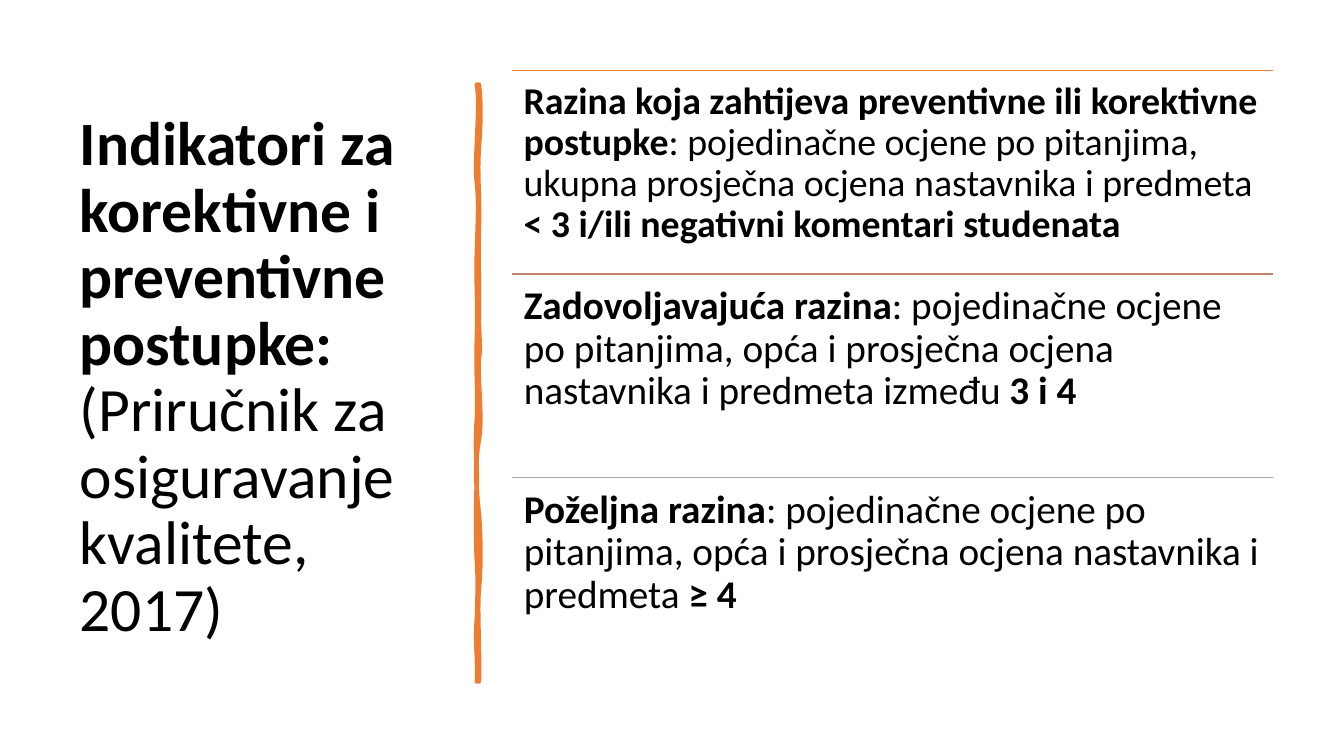
import lxml.etree
import pptx
import pptx.dml.color
import pptx.enum.shapes
import pptx.enum.text
import pptx.oxml.ns
import pptx.util

PX = 9144  # EMU per px, 100 px to the inch
SLIDE = (1333, 750)
COLORS = {"text": "000000", "orange": "ED7D31", "copper": "C48170", "grey": "A5A5A5"}

# Each run is (text, bold); each title entry is one line before wrapping.
TITLE = [
    ("Indikatori za korektivne i preventivne postupke:", True),
    ("(Priručnik za osiguravanje kvalitete, 2017)", False),
]
TITLE_BOX = (69, 70, 374, 611)

# (rule colour, text size, runs)
LEVELS = [
    ("orange", 27, [
        ("Razina koja zahtijeva preventivne ili korektivne postupke", True),
        (": pojedinačne ocjene po pitanjima, ukupna prosječna ocjena nastavnika i predmeta ", False),
        ("< 3 i/ili negativni komentari studenata", True),
    ]),
    ("copper", 28, [
        ("Zadovoljavajuća razina", True),
        (": pojedinačne ocjene po pitanjima, opća i prosječna ocjena nastavnika i predmeta između ", False),
        ("3 i 4", True),
    ]),
    ("grey", 28, [
        ("Poželjna razina", True),
        (": pojedinačne ocjene po pitanjima, opća i prosječna ocjena nastavnika i predmeta ", False),
        ("≥ 4", True),
    ]),
]
LEVEL_LEFT, LEVEL_TOP, LEVEL_W, LEVEL_H = 508, 70, 755, 202
INSET_RATIO = 0.3  # text inset as a share of the text size

# Brush stroke: a start point, then two control points and an end point per curve.
BRUSH_CENTRE = (474, 380)
BRUSH_START = (475, 84)
BRUSH_CURVES = [
    ((477, 102), (477, 119), (475, 146)),
    ((473, 173), (476, 195), (475, 226)),
    ((474, 257), (475, 262), (475, 294)),
    ((474, 325), (477, 342), (475, 356)),
    ((473, 370), (479, 414), (475, 436)),
    ((471, 457), (472, 484), (475, 510)),
    ((477, 536), (477, 564), (475, 584)),
    ((473, 603), (476, 650), (475, 676)),
    ((474, 676), (473, 676), (473, 676)),
    ((474, 646), (471, 644), (473, 613)),
    ((474, 583), (474, 570), (473, 557)),
    ((472, 544), (472, 495), (473, 477)),
    ((473, 459), (471, 445), (473, 415)),
    ((474, 386), (472, 373), (473, 335)),
    ((474, 298), (472, 281), (473, 250)),
    ((474, 218), (475, 200), (473, 181)),
    ((470, 163), (477, 104), (473, 84)),
]


def emu(*lengths):
    return [pptx.util.Emu(n * PX) for n in lengths]


def rgb(name):
    return pptx.dml.color.RGBColor.from_string(COLORS[name])


def set_all(obj, values):
    for name, value in values.items():
        setattr(obj, name, value)


def format_frame(tf, anchor, inset_x, inset_y):
    set_all(tf, {
        "word_wrap": True,
        "auto_size": pptx.enum.text.MSO_AUTO_SIZE.NONE,
        "vertical_anchor": anchor,
        "margin_left": inset_x, "margin_right": inset_x,
        "margin_top": inset_y, "margin_bottom": inset_y,
    })
    p = tf.paragraphs[0]
    set_all(p, {"alignment": pptx.enum.text.PP_ALIGN.LEFT, "line_spacing": 0.9})
    return p


def add_run(p, text, bold, size):
    r = p.add_run()
    r.text = text
    set_all(r.font, {"name": "Calibri", "size": pptx.util.Pt(size), "bold": bold})
    r.font.color.rgb = rgb("text")


def add_title(s):
    sp = s.shapes.title
    set_all(sp, dict(zip(("left", "top", "width", "height"), emu(*TITLE_BOX))))
    p = format_frame(sp.text_frame, pptx.enum.text.MSO_ANCHOR.MIDDLE, *emu(10, 5))
    for i, (text, bold) in enumerate(TITLE):
        if i:
            p.add_line_break()
        add_run(p, text, bold, 44)


def lay_flat(point):
    """Turn a point a quarter turn back around the brush centre, in EMU."""
    (x, y), (cx, cy) = point, BRUSH_CENTRE
    return emu(cx + y - cy, cy - x + cx)


def add_brush(s):
    builder = s.shapes.build_freeform(*lay_flat(BRUSH_START), scale=1.0)
    builder.add_line_segments([lay_flat(curve[-1]) for curve in BRUSH_CURVES], close=True)
    sp = builder.convert_to_shape()

    # Bend each straight segment into its cubic curve.
    qn = pptx.oxml.ns.qn
    segments = list(sp._element.spPr.iter(qn("a:lnTo")))
    for segment, curve in zip(segments, BRUSH_CURVES):
        bezier = lxml.etree.Element(qn("a:cubicBezTo"))
        for point in curve:
            x, y = lay_flat(point)
            lxml.etree.SubElement(bezier, qn("a:pt"), x=str(x - sp.left), y=str(y - sp.top))
        segment.getparent().replace(segment, bezier)

    sp.rotation = 90
    sp.shadow.inherit = False
    sp.fill.solid()
    sp.fill.fore_color.rgb = sp.line.color.rgb = rgb("orange")
    sp.line.width = pptx.util.Pt(3.25)


def add_level(s, top, color, size, runs):
    rule = s.shapes.add_connector(
        pptx.enum.shapes.MSO_CONNECTOR.STRAIGHT,
        *emu(LEVEL_LEFT, top, LEVEL_LEFT + LEVEL_W, top))
    rule.line.color.rgb = rgb(color)
    rule.line.width = pptx.util.Pt(1)
    lxml.etree.SubElement(rule._element.spPr, pptx.oxml.ns.qn("a:effectLst"))

    box = s.shapes.add_textbox(*emu(LEVEL_LEFT, top, LEVEL_W, LEVEL_H))
    inset = pptx.util.Pt(size * INSET_RATIO)
    p = format_frame(box.text_frame, pptx.enum.text.MSO_ANCHOR.TOP, inset, inset)
    for text, bold in runs:
        add_run(p, text, bold, size)


def main():
    prs = pptx.Presentation()
    prs.slide_width, prs.slide_height = emu(*SLIDE)
    s = prs.slides.add_slide(prs.slide_layouts[5])
    add_title(s)
    add_brush(s)
    for i, level in enumerate(LEVELS):
        add_level(s, LEVEL_TOP + i * LEVEL_H, *level)
    prs.save("out.pptx")


if __name__ == "__main__":
    main()
